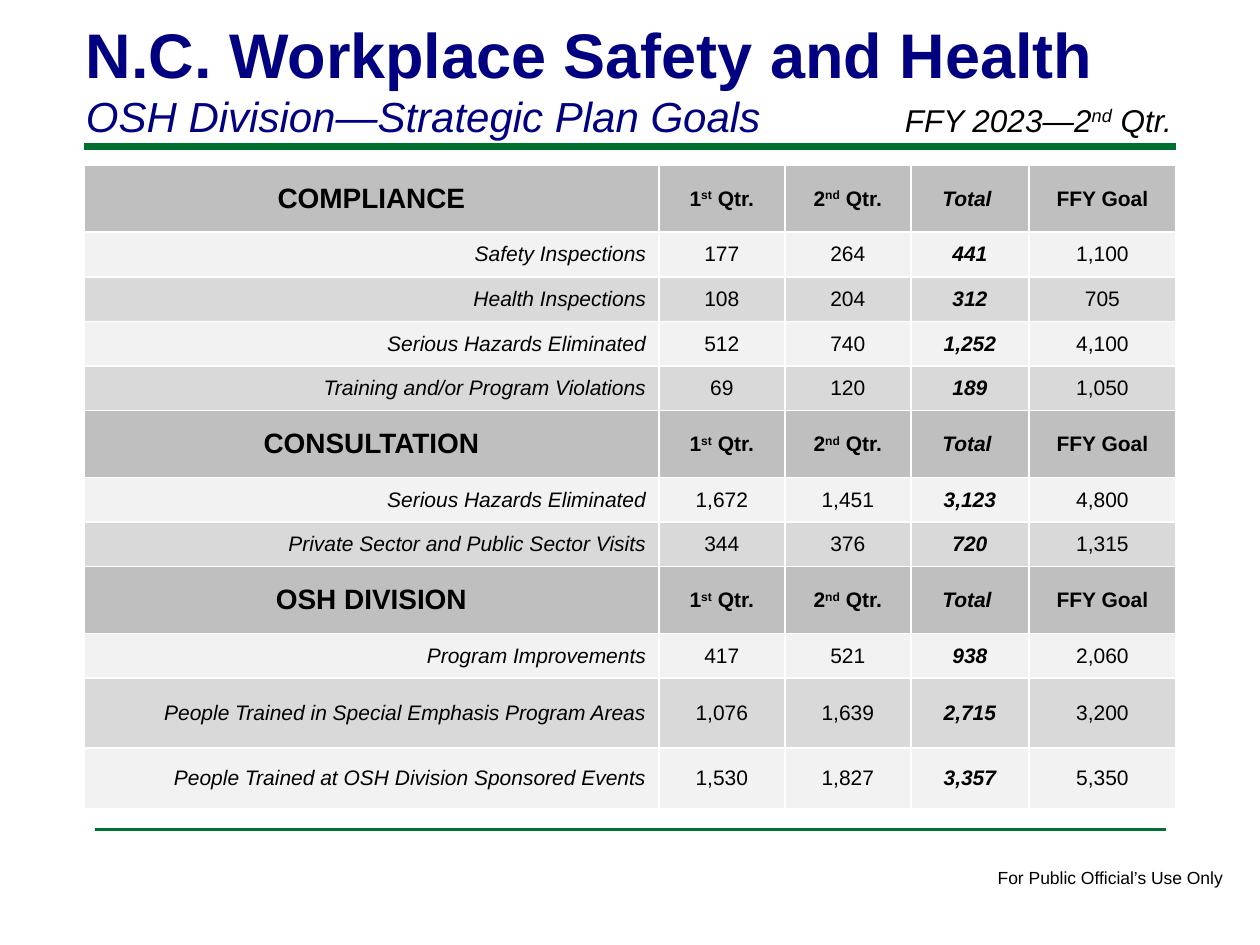
from lxml import etree
from pptx import Presentation
from pptx.dml.color import RGBColor
from pptx.enum.shapes import MSO_CONNECTOR
from pptx.enum.text import MSO_ANCHOR, PP_ALIGN
from pptx.oxml.ns import qn
from pptx.util import Pt

STRAIGHT = MSO_CONNECTOR.STRAIGHT
TOP, MIDDLE, BOTTOM = MSO_ANCHOR.TOP, MSO_ANCHOR.MIDDLE, MSO_ANCHOR.BOTTOM
LEFT, CENTER, RIGHT = PP_ALIGN.LEFT, PP_ALIGN.CENTER, PP_ALIGN.RIGHT

FONT = "Arial"
COLORS = {
    "green": "007030",
    "navy": "000080",
    "black": "000000",
    "white": "FFFFFF",
    "head": "BFBFBF",
    "light": "F2F2F2",
    "dark": "D9D9D9",
}
WIDTHS = [328.5, 72, 72, 67.5, 84]
HEAD, ROW = 38.2, 25.5
LABELS = ["1^st^ Qtr.", "2^nd^ Qtr.", "Total ", "FFY Goal"]
GROUPS = [
    ("COMPLIANCE", [
        (ROW, "Safety Inspections", "177", "264", "441", "1,100"),
        (ROW, "Health Inspections", "108", "204", "312", "705"),
        (ROW, "Serious Hazards Eliminated", "512", "740", "1,252", "4,100"),
        (ROW, "Training and/or Program Violations", "69", "120", "189", "1,050"),
    ]),
    ("CONSULTATION", [
        (ROW, "Serious Hazards Eliminated", "1,672", "1,451", "3,123", "4,800"),
        (ROW, "Private Sector and Public Sector Visits", "344", "376", "720", "1,315"),
    ]),
    ("OSH DIVISION", [
        (ROW, "Program Improvements", "417", "521", "938", "2,060"),
        (40, "People Trained in Special Emphasis Program Areas",
         "1,076", "1,639", "2,715", "3,200"),
        (34.5, "People Trained at OSH Division Sponsored Events",
         "1,530", "1,827", "3,357", "5,350"),
    ]),
]


def rgb(name):
    return RGBColor.from_string(COLORS[name])


def write(para, text, size, color="black", bold=False, italic=False, align=LEFT):
    para.alignment = align
    for i, part in enumerate(text.split("^")):
        run = para.add_run()
        run.text = part
        font = run.font
        font.name, font.size = FONT, Pt(size)
        font.bold, font.italic = bold, italic
        font.color.rgb = rgb(color)
        if i % 2:
            run._r.get_or_add_rPr().set("baseline", "30000")


def add_box(slide, x, y, w, h, anchor=TOP, wrap=True):
    box = slide.shapes.add_textbox(Pt(x), Pt(y), Pt(w), Pt(h))
    frame = box.text_frame
    frame.word_wrap = wrap
    frame.vertical_anchor = anchor
    return frame


def add_rule(slide, x1, x2, y, width):
    rule = slide.shapes.add_connector(STRAIGHT, Pt(x1), Pt(y), Pt(x2), Pt(y))
    rule.line.color.rgb = rgb("green")
    rule.line.width = Pt(width)
    etree.SubElement(rule._element.spPr, qn("a:effectLst"))


def set_edges(cell):
    props = cell._tc.get_or_add_tcPr()
    for side in ("lnL", "lnR", "lnT", "lnB"):
        edge = etree.SubElement(props, qn("a:" + side), w=str(Pt(1)))
        fill = etree.SubElement(edge, qn("a:solidFill"))
        etree.SubElement(fill, qn("a:srgbClr"), val=COLORS["white"])


def fill_row(table, index, height, texts, fill, head):
    table.rows[index].height = Pt(height)
    for col, text in enumerate(texts):
        cell = table.cell(index, col)
        set_edges(cell)
        cell.fill.solid()
        cell.fill.fore_color.rgb = rgb(fill)
        cell.vertical_anchor = MIDDLE
        first, total = col == 0, col == 3
        write(
            cell.text_frame.paragraphs[0], text,
            size=16 if head and first else 12,
            bold=head or total,
            italic=total or (first and not head),
            align=RIGHT if first and not head else CENTER,
        )


def add_goals(slide):
    rows = []
    for name, items in GROUPS:
        rows.append((HEAD, [name] + LABELS, "head", True))
        for i, (height, *texts) in enumerate(items):
            rows.append((height, texts, "dark" if i % 2 else "light", False))
    total = sum(row[0] for row in rows)
    frame = slide.shapes.add_table(
        len(rows), len(WIDTHS), Pt(48), Pt(94.5), Pt(sum(WIDTHS)), Pt(total))
    table = frame.table
    for col, width in zip(table.columns, WIDTHS):
        col.width = Pt(width)
    for index, row in enumerate(rows):
        fill_row(table, index, *row)


def main():
    deck = Presentation()
    deck.slide_width, deck.slide_height = Pt(720), Pt(540)
    slide = deck.slides.add_slide(deck.slide_layouts[6])

    add_rule(slide, 48, 672, 84, 4)
    add_rule(slide, 54, 666, 474, 2)

    note = add_box(slide, 563, 492, 145, 19.4, wrap=False)
    write(note.paragraphs[0], "For Public Official’s Use Only", 10)

    title = add_box(slide, 42, 4.3, 594, 80, anchor=BOTTOM)
    write(title.paragraphs[0], "N.C. Workplace Safety and Health", 36, "navy", bold=True)
    write(title.add_paragraph(), "OSH Division—Strategic Plan Goals", 24, "navy", italic=True)

    add_goals(slide)

    term = add_box(slide, 510, 54, 180, 29)
    write(term.paragraphs[0], "FFY 2023—2^nd^ Qtr.", 18, italic=True)

    deck.save("out.pptx")


if __name__ == "__main__":
    main()
